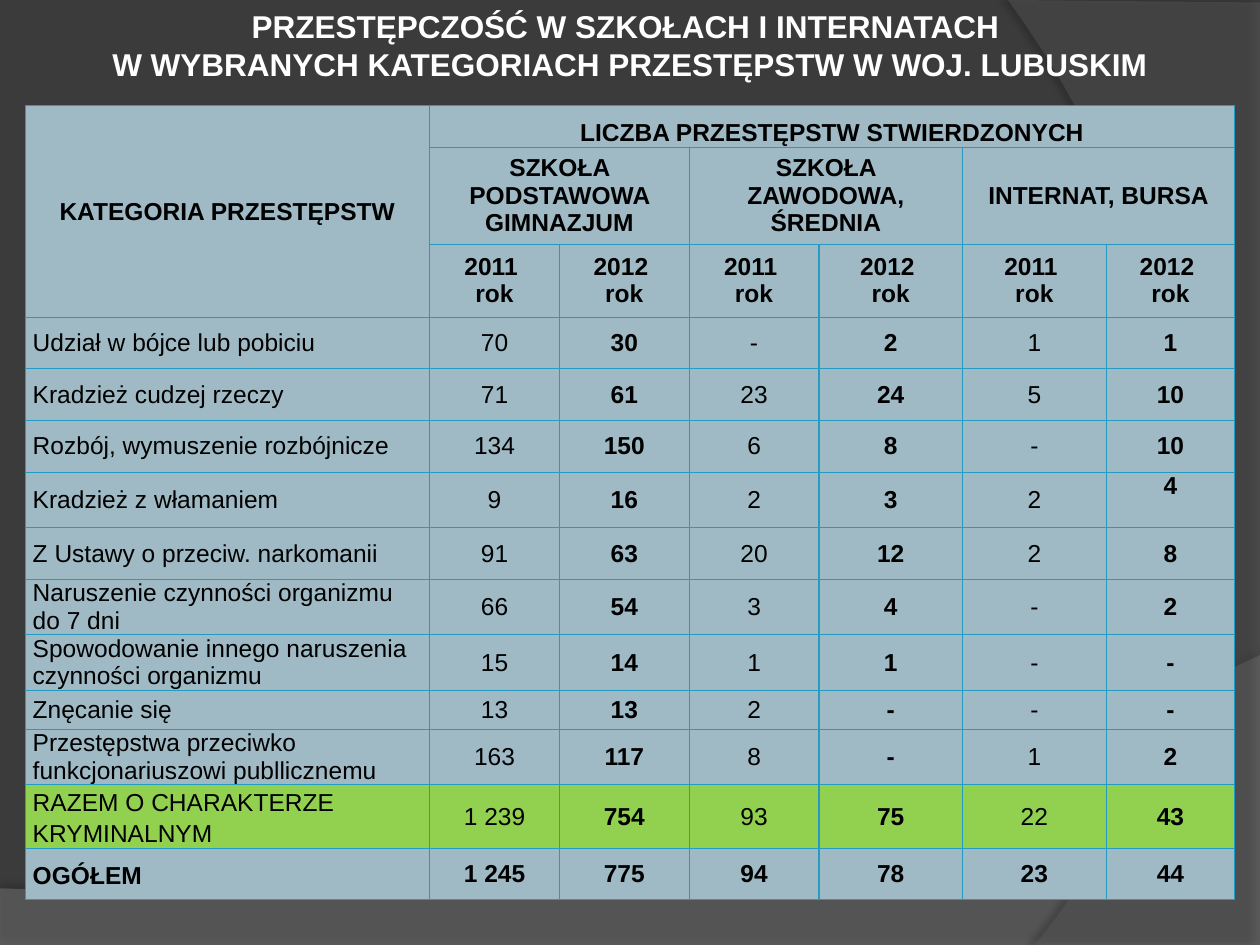
from dataclasses import dataclass
from typing import Optional

from lxml.etree import SubElement
from pptx import Presentation
from pptx.dml.color import RGBColor
from pptx.enum.text import MSO_ANCHOR, MSO_AUTO_SIZE, PP_ALIGN
from pptx.oxml import parse_xml
from pptx.oxml.ns import nsdecls, qn
from pptx.util import Inches, Pt

Point = tuple[float, float]
FONT = "Arial"
BLACK, WHITE = "000000", "FFFFFF"
BACKDROP, CELL, TOTAL, BORDER = "3B3B3B", "9FBAC4", "92D050", "239BC2"
SLIDE_W, SLIDE_H = Inches(10), Inches(7.5)
COL_SHARES = [32.1, 10.3, 10.3, 10.3, 11.4, 11.4, 10.2]
SINGLE, DOUBLE = 5.47, 5.87
HEADER_SHARES = [4.27, 10.27, 7.73]


@dataclass
class Curve:
    c1: Point
    c2: Point
    end: Point


@dataclass
class Swoosh:
    corners: list[Point]
    curve: Curve
    color: str
    opacity: int
    shadow_opacity: int
    shadow_distance: float
    shadow_angle: int


@dataclass
class Category:
    name: str
    counts: list[str]
    height: float = SINGLE
    fill: str = CELL
    bold: bool = False
    spacing: Optional[float] = None


SWOOSHES = [
    Swoosh([(0, 94), (0, 100), (100, 100), (100, 69.33)],
           Curve((55.9, 97.2), (39.1, 95.87), (0, 94)), "7F7F7F", 45, 35, 3.5, 270),
    Swoosh([(100, 0.27), (100, 100), (82.1, 100)],
           Curve((93.5, 82.53), (101.8, 40), (80, 0)), "5E5E5E", 40, 45, 4, 180),
]
SCHOOLS = ["SZKOŁA PODSTAWOWA GIMNAZJUM", "SZKOŁA ZAWODOWA, ŚREDNIA", "INTERNAT, BURSA"]
YEARS = ["2011 \nrok", "2012 \nrok"]
CATEGORIES = [
    Category("Udział w bójce lub pobiciu", ["70", "30", "-", "2", "1", "1"]),
    Category("Kradzież cudzej rzeczy", ["71", "61", "23", "24", "5", "10"]),
    Category("Rozbój, wymuszenie rozbójnicze", ["134", "150", "6", "8", "-", "10"]),
    Category("Kradzież z włamaniem", ["9", "16", "2", "3", "2", "4"], DOUBLE),
    Category("Z Ustawy o przeciw. narkomanii", ["91", "63", "20", "12", "2", "8"]),
    Category("Naruszenie czynności organizmu do 7 dni",
             ["66", "54", "3", "4", "-", "2"], DOUBLE),
    Category("Spowodowanie innego naruszenia czynności organizmu",
             ["15", "14", "1", "1", "-", "-"], DOUBLE),
    Category("Znęcanie się", ["13", "13", "2", "-", "-", "-"], 4.13),
    Category("Przestępstwa przeciwko funkcjonariuszowi publlicznemu",
             ["163", "117", "8", "-", "1", "2"], DOUBLE),
    Category("RAZEM O CHARAKTERZE KRYMINALNYM",
             ["1 239", "754", "93", "75", "22", "43"], 6.67, TOTAL, spacing=1.15),
    Category("OGÓŁEM", ["1 245", "775", "94", "78", "23", "44"], bold=True, spacing=1.15),
]


def across(share: float) -> int:
    return round(SLIDE_W * share / 100)


def down(share: float) -> int:
    return round(SLIDE_H * share / 100)


def paint(fill, color: str) -> None:
    fill.solid()
    fill.fore_color.rgb = RGBColor.from_string(color)


def format_text(tf, size: int, color: str, bold: bool, align: PP_ALIGN,
                spacing: Optional[float] = None) -> None:
    for p in tf.paragraphs:
        p.alignment = align
        if spacing:
            p.line_spacing = spacing
        for r in p.runs:
            r.font.name, r.font.size, r.font.bold = FONT, Pt(size), bold
            r.font.color.rgb = RGBColor.from_string(color)


def bezier(start: Point, curve: Curve, steps: int = 40) -> list[Point]:
    def at(t: float) -> Point:
        weights = ((1 - t) ** 3, 3 * t * (1 - t) ** 2, 3 * t * t * (1 - t), t ** 3)
        knots = (start, curve.c1, curve.c2, curve.end)
        return (sum(w * k[0] for w, k in zip(weights, knots)),
                sum(w * k[1] for w, k in zip(weights, knots)))
    return [at(i / steps) for i in range(1, steps + 1)]


def draw_swoosh(s, swoosh: Swoosh) -> None:
    outline = swoosh.corners + bezier(swoosh.corners[-1], swoosh.curve)
    points = [(across(x), down(y)) for x, y in outline]
    builder = s.shapes.build_freeform(*points[0], scale=1.0)
    builder.add_line_segments(points[1:], close=True)
    sp = builder.convert_to_shape()
    paint(sp.fill, swoosh.color)
    sp.line.fill.background()
    color = sp.element.spPr.find(qn("a:solidFill"))[0]
    SubElement(color, qn("a:alpha"), val=str(swoosh.opacity * 1000))
    sp.element.spPr.append(parse_xml(
        f'<a:effectLst {nsdecls("a")}><a:outerShdw blurRad="{Pt(4)}" '
        f'dist="{Pt(swoosh.shadow_distance)}" dir="{swoosh.shadow_angle * 60000}" '
        f'algn="ctr" rotWithShape="0"><a:srgbClr val="{BLACK}">'
        f'<a:alpha val="{swoosh.shadow_opacity * 1000}"/></a:srgbClr>'
        f'</a:outerShdw></a:effectLst>'))


def style_cell(cell, color: str) -> None:
    cell.margin_left = cell.margin_right = Inches(0.06)
    cell.margin_top = cell.margin_bottom = 0
    cell.vertical_anchor = MSO_ANCHOR.MIDDLE
    paint(cell.fill, color)
    tc_pr = cell._tc.get_or_add_tcPr()
    for i, side in enumerate(("lnL", "lnR", "lnT", "lnB")):
        tc_pr.insert(i, parse_xml(
            f'<a:{side} {nsdecls("a")} w="{Pt(0.75)}"><a:solidFill>'
            f'<a:srgbClr val="{BORDER}"/></a:solidFill></a:{side}>'))


def write_cell(cell, text: str, bold: bool, align: PP_ALIGN = PP_ALIGN.CENTER,
               spacing: Optional[float] = None) -> None:
    cell.text_frame.text = text
    format_text(cell.text_frame, 14, BLACK, bold, align, spacing)


def draw_table(s) -> None:
    heights = HEADER_SHARES + [c.height for c in CATEGORIES]
    table = s.shapes.add_table(len(heights), len(COL_SHARES), across(2), down(11.2),
                               across(sum(COL_SHARES)), down(sum(heights))).table
    table.first_row = table.horz_banding = False
    for col, share in zip(table.columns, COL_SHARES):
        col.width = across(share)
    fills = [CELL] * len(HEADER_SHARES) + [c.fill for c in CATEGORIES]
    for row, share, color in zip(table.rows, heights, fills):
        row.height = down(share)
        for cell in row.cells:
            style_cell(cell, color)

    table.cell(0, 0).merge(table.cell(2, 0))
    write_cell(table.cell(0, 0), "KATEGORIA PRZESTĘPSTW", True)
    table.cell(0, 1).merge(table.cell(0, 6))
    write_cell(table.cell(0, 1), "LICZBA PRZESTĘPSTW STWIERDZONYCH", True, spacing=1.5)
    for i, school in enumerate(SCHOOLS):
        left = 1 + 2 * i
        table.cell(1, left).merge(table.cell(1, left + 1))
        write_cell(table.cell(1, left), school, True)
        for j, year in enumerate(YEARS):
            write_cell(table.cell(2, left + j), year, True)

    for i, category in enumerate(CATEGORIES, len(HEADER_SHARES)):
        write_cell(table.cell(i, 0), category.name, category.bold,
                   PP_ALIGN.LEFT, category.spacing)
        for j, count in enumerate(category.counts, 1):
            write_cell(table.cell(i, j), count, category.bold or j % 2 == 0)
    table.cell(6, 6).vertical_anchor = MSO_ANCHOR.TOP


def draw_title(s) -> None:
    sp = s.shapes.title
    sp.left, sp.top, sp.width, sp.height = across(7.5), 0, across(85), down(9.47)
    tf = sp.text_frame
    tf.text = ("PRZESTĘPCZOŚĆ W SZKOŁACH I INTERNATACH \n"
               "W WYBRANYCH KATEGORIACH PRZESTĘPSTW W WOJ. LUBUSKIM")
    tf.word_wrap = False
    tf.auto_size = MSO_AUTO_SIZE.NONE
    tf.vertical_anchor = MSO_ANCHOR.MIDDLE
    format_text(tf, 18, WHITE, True, PP_ALIGN.CENTER)
    for p in tf.paragraphs:
        p.space_before = Pt(0)
    sp.element.getparent().append(sp.element)


def main() -> None:
    prs = Presentation()
    prs.slide_width, prs.slide_height = SLIDE_W, SLIDE_H
    s = prs.slides.add_slide(prs.slide_layouts[5])
    paint(s.background.fill, BACKDROP)
    for swoosh in SWOOSHES:
        draw_swoosh(s, swoosh)
    draw_table(s)
    draw_title(s)
    prs.save("out.pptx")


if __name__ == "__main__":
    main()
